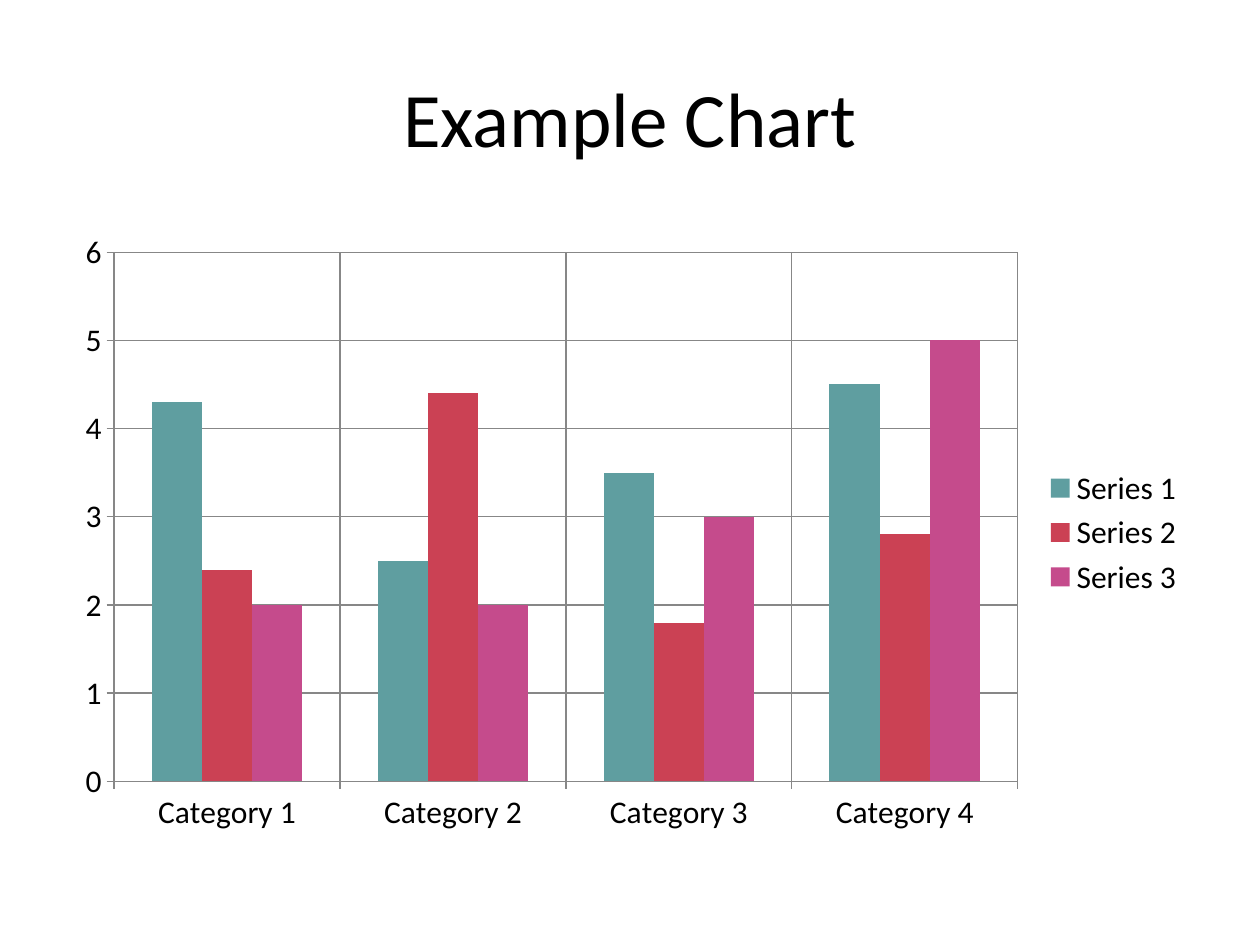
from pptx import Presentation
from pptx import util as u
from pptx.chart import data as chart_data
from pptx.dml.color import RGBColor
from pptx.enum import chart as ch, text

BLACK = RGBColor(0x00, 0x00, 0x00)
GREY = RGBColor(0x87, 0x87, 0x87)
TEAL = RGBColor(0x5F, 0x9E, 0xA0)
RED = RGBColor(0xCB, 0x41, 0x54)
PINK = RGBColor(0xC5, 0x4B, 0x8C)

CATEGORIES = ["Category 1", "Category 2", "Category 3", "Category 4"]
SERIES = [
    ("Series 1", (4.3, 2.5, 3.5, 4.5), TEAL),
    ("Series 2", (2.4, 4.4, 1.8, 2.8), RED),
    ("Series 3", (2, 2, 3, 5), PINK),
]


def set_attributes(target, values):
    for name, value in values.items():
        setattr(target, name, value)


def set_font(font, size):
    set_attributes(font, {"name": "Calibri", "size": u.Pt(size), "bold": False})
    font.color.rgb = BLACK


def set_line(line):
    line.color.rgb = GREY
    line.width = u.Pt(0.75)


def add_title(slide, box, wording):
    frame = slide.shapes.add_textbox(*box).text_frame
    set_attributes(frame, {"word_wrap": True,
                           "vertical_anchor": text.MSO_ANCHOR.MIDDLE})
    paragraph = frame.paragraphs[0]
    set_attributes(paragraph, {"text": wording, "alignment": text.PP_ALIGN.CENTER})
    set_font(paragraph.font, 44)


def add_column_chart(slide, box):
    data = chart_data.CategoryChartData()
    data.categories = CATEGORIES
    for name, values, _ in SERIES:
        data.add_series(name, values)
    chart = slide.shapes.add_chart(
        ch.XL_CHART_TYPE.COLUMN_CLUSTERED, *box, data).chart
    set_attributes(chart, {"has_title": False, "has_legend": True})
    set_font(chart.font, 18)
    set_attributes(chart.legend, {"position": ch.XL_LEGEND_POSITION.RIGHT,
                                  "include_in_layout": False})

    # Columns
    plot = chart.plots[0]
    set_attributes(plot, {"gap_width": 150, "overlap": 0,
                          "vary_by_categories": False})
    for series, (_, _, color) in zip(plot.series, SERIES):
        series.invert_if_negative = False
        series.format.fill.solid()
        series.format.fill.fore_color.rgb = color

    # Axes and gridlines
    for axis in (chart.category_axis, chart.value_axis):
        set_attributes(axis, {"major_tick_mark": ch.XL_TICK_MARK.OUTSIDE,
                              "minor_tick_mark": ch.XL_TICK_MARK.NONE,
                              "has_major_gridlines": axis is not chart.category_axis})
        set_line(axis.format.line)
    set_attributes(chart.value_axis, {"minimum_scale": 0, "maximum_scale": 6,
                                      "major_unit": 1})
    set_line(chart.value_axis.major_gridlines.format.line)


def main():
    presentation = Presentation()
    set_attributes(presentation, {"slide_width": u.Cm(25.4),
                                  "slide_height": u.Cm(19.05)})
    slide = presentation.slides.add_slide(presentation.slide_layouts[6])
    margin = u.Cm(1.27)
    width = presentation.slide_width - 2 * margin
    add_title(slide, (margin, u.Cm(0.76), width, u.Cm(3.18)), "Example Chart")
    add_column_chart(slide, (margin, u.Cm(4.45), width, u.Cm(12.57)))
    presentation.save("out.pptx")


if __name__ == "__main__":
    main()
